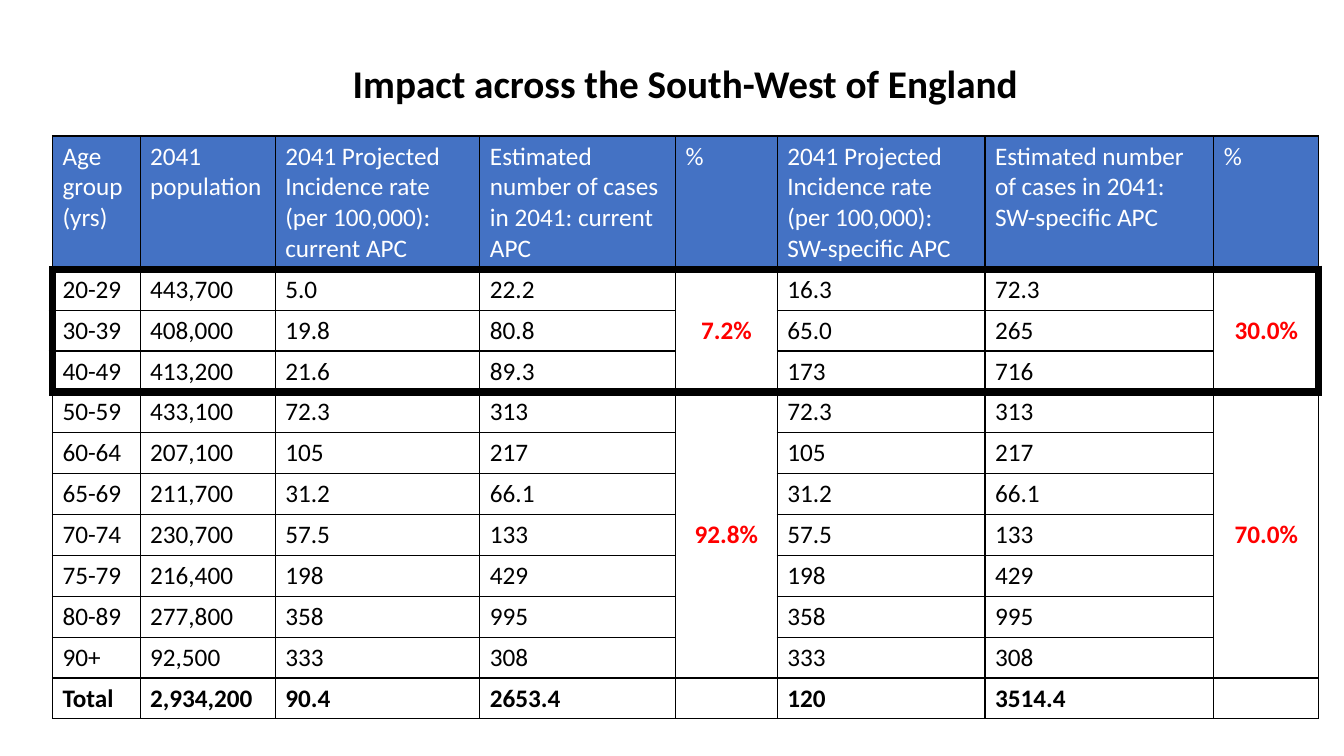
from dataclasses import dataclass

from lxml.etree import SubElement
from pptx import Presentation
from pptx.dml.color import RGBColor
from pptx.enum.text import MSO_ANCHOR, PP_ALIGN
from pptx.oxml.ns import qn
from pptx.util import Inches, Pt


@dataclass(frozen=True)
class Theme:
    font: str = "Calibri"
    ink: str = "000000"
    header_text: str = "FFFFFF"
    header_fill: str = "4472C4"
    share: str = "FF0000"
    title_size: int = 28
    table_size: int = 18
    thin: int = 1
    thick: int = 6


theme = Theme()


def write(frame, text, size=theme.table_size, color=theme.ink, bold=False, align=PP_ALIGN.LEFT):
    para = frame.paragraphs[0]
    para.alignment = align
    span = para.add_run()
    span.text = text
    span.font.name = theme.font
    span.font.size = Pt(size)
    span.font.bold = bold
    span.font.color.rgb = RGBColor.from_string(color)


def set_border(cell, side, width):
    line = SubElement(cell._tc.get_or_add_tcPr(), qn(f"a:ln{side}"), w=str(Pt(width)))
    fill = SubElement(line, qn("a:solidFill"))
    SubElement(fill, qn("a:srgbClr"), val=theme.ink)


# Slide
deck = Presentation()
deck.slide_width, deck.slide_height = Inches(13.33), Inches(7.5)
page = deck.slides.add_slide(deck.slide_layouts[5])

# Title
title = page.shapes.title
title.left, title.top, title.width, title.height = map(Inches, (3.3, 0.54, 6.99, 0.57))
title.text_frame.vertical_anchor = MSO_ANCHOR.MIDDLE
write(title.text_frame, "Impact across the South-West of England",
      size=theme.title_size, bold=True, align=PP_ALIGN.CENTER)

# Table content
rows = [
    ("Age group (yrs)", "2041 population",
     "2041 Projected Incidence rate (per 100,000): current APC",
     "Estimated number of cases in 2041: current APC", "%",
     "2041 Projected Incidence rate (per 100,000): SW-specific APC",
     "Estimated number of cases in 2041: SW-specific APC", "%"),
    ("20-29", "443,700", "5.0", "22.2", "7.2%", "16.3", "72.3", "30.0%"),
    ("30-39", "408,000", "19.8", "80.8", "", "65.0", "265", ""),
    ("40-49", "413,200", "21.6", "89.3", "", "173", "716", ""),
    ("50-59", "433,100", "72.3", "313", "92.8%", "72.3", "313", "70.0%"),
    ("60-64", "207,100", "105", "217", "", "105", "217", ""),
    ("65-69", "211,700", "31.2", "66.1", "", "31.2", "66.1", ""),
    ("70-74", "230,700", "57.5", "133", "", "57.5", "133", ""),
    ("75-79", "216,400", "198", "429", "", "198", "429", ""),
    ("80-89", "277,800", "358", "995", "", "358", "995", ""),
    ("90+", "92,500", "333", "308", "", "333", "308", ""),
    ("Total", "2,934,200", "90.4", "2653.4", "", "120", "3514.4", ""),
]
column_widths = [0.87, 1.34, 2.03, 1.94, 1.01, 2.06, 2.27, 1.04]
header_height, row_height = 1.3, 0.4
share_columns = (4, 7)
under_50 = range(1, 4)
total_row, last_column = len(rows) - 1, len(column_widths) - 1

# Table grid
table = page.shapes.add_table(
    len(rows), len(column_widths), Inches(0.52), Inches(1.35),
    Inches(sum(column_widths)), Inches(header_height + total_row * row_height)).table
for column, width in zip(table.columns, column_widths):
    column.width = Inches(width)
for number, row in enumerate(table.rows):
    row.height = Inches(row_height if number else header_height)

# Shares span the under-50 and the 50+ age groups
for column in share_columns:
    for first, last in ((1, 3), (4, 10)):
        table.cell(first, column).merge(table.cell(last, column))

# Cells, with a heavy frame around the under-50 rows
for r, values in enumerate(rows):
    for c, text in enumerate(values):
        cell = table.cell(r, c)
        bottom = r + cell.span_height - 1 if cell.is_merge_origin else r
        heavy = {
            "L": r in under_50 and c == 0,
            "R": r in under_50 and c == last_column,
            "T": r in (under_50[0], under_50[-1] + 1),
            "B": bottom in (under_50[0] - 1, under_50[-1]),
        }
        for side, is_heavy in heavy.items():
            set_border(cell, side, theme.thick if is_heavy else theme.thin)
        if r == 0:
            cell.fill.solid()
            cell.fill.fore_color.rgb = RGBColor.from_string(theme.header_fill)
        else:
            cell.fill.background()
        if not text:
            continue
        if cell.is_merge_origin:
            cell.vertical_anchor = MSO_ANCHOR.MIDDLE
            write(cell.text_frame, text, color=theme.share, bold=True, align=PP_ALIGN.CENTER)
        else:
            write(cell.text_frame, text, bold=r == total_row,
                  color=theme.ink if r else theme.header_text)

deck.save("out.pptx")
